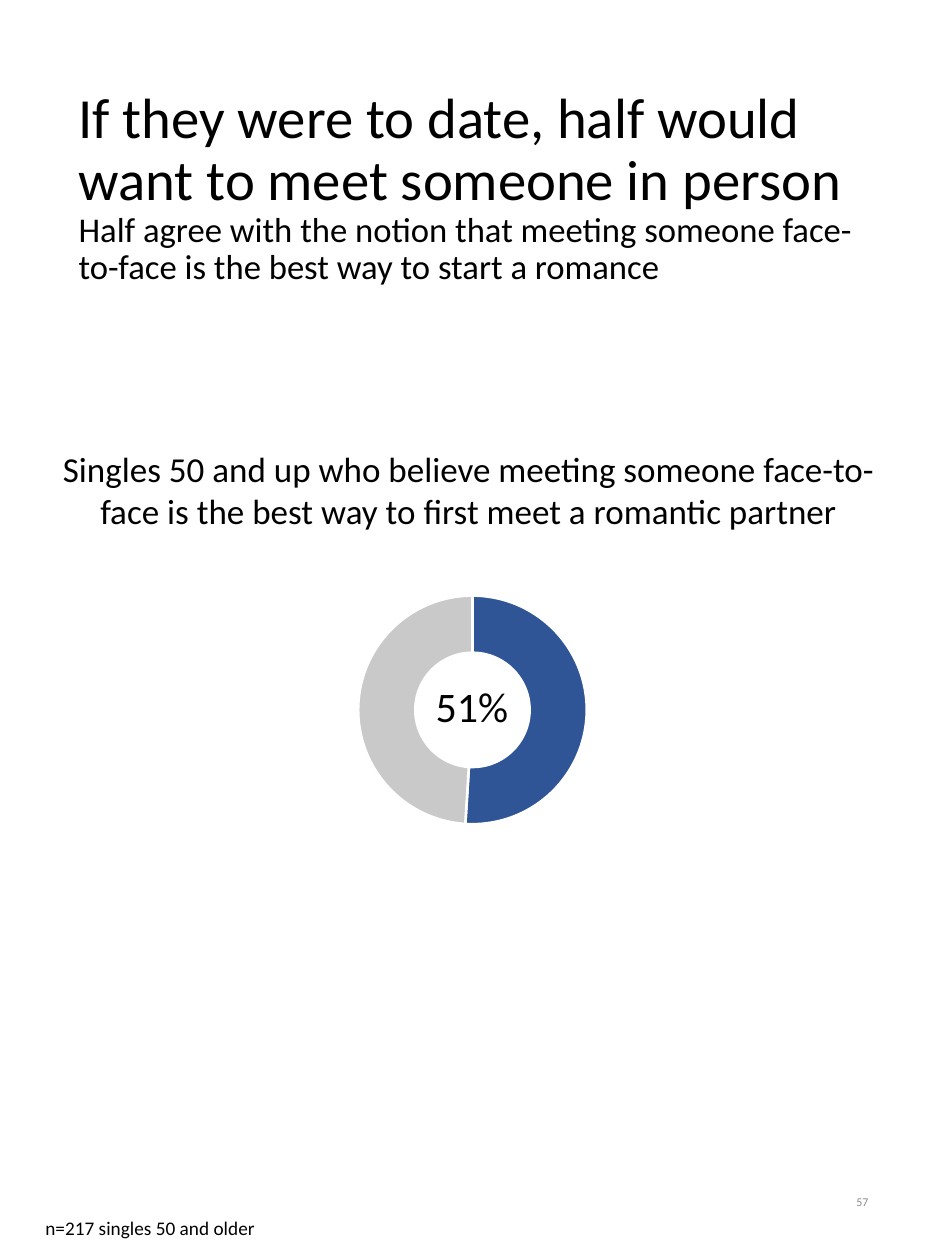
from copy import deepcopy
from dataclasses import dataclass

from lxml import etree
from pptx import Presentation
from pptx.chart.data import CategoryChartData
from pptx.dml.color import RGBColor
from pptx.enum.chart import XL_CHART_TYPE
from pptx.enum.text import MSO_ANCHOR, MSO_AUTO_SIZE, PP_ALIGN
from pptx.oxml.ns import qn
from pptx.util import Emu, Pt

DOUGHNUT = XL_CHART_TYPE.DOUGHNUT
LEFT, CENTER, RIGHT = PP_ALIGN.LEFT, PP_ALIGN.CENTER, PP_ALIGN.RIGHT
TOP, MIDDLE = MSO_ANCHOR.TOP, MSO_ANCHOR.MIDDLE
FIXED = MSO_AUTO_SIZE.NONE
TITLE_ONLY = 5
PX_PER_INCH = 126


@dataclass(frozen=True)
class Theme:
    font: str = "Calibri"
    ink: str = "000000"
    muted: str = "8C8C8C"
    agree: str = "2F5597"
    rest: str = "C9C9C9"
    gap: str = "FFFFFF"
    title: float = 32.4
    subtitle: float = 19.8
    caption: float = 20
    share: float = 24
    note: float = 11
    number: float = 6.8
    chart: float = 10


THEME = Theme()


def px(length):
    return Emu(round(length * 914400 / PX_PER_INCH))


def rgb(value):
    return RGBColor.from_string(value)


def set_font(font, size, color=THEME.ink):
    font.name = THEME.font
    font.size = Pt(size)
    font.color.rgb = rgb(color)


def add_run(paragraph, text, size, color=THEME.ink):
    run = paragraph.add_run()
    run.text = text
    set_font(run.font, size, color)
    return run


def add_text(slide, box, text, size, color=THEME.ink, align=LEFT, anchor=TOP):
    frame = slide.shapes.add_textbox(*map(px, box)).text_frame
    frame.word_wrap = True
    frame.auto_size = FIXED
    frame.vertical_anchor = anchor
    frame.paragraphs[0].alignment = align
    add_run(frame.paragraphs[0], text, size, color)


def add_heading(slide, box):
    """Headline with its smaller subtitle in the title placeholder."""
    title = slide.shapes.title
    title.left, title.top, title.width, title.height = map(px, box)
    frame = title.text_frame
    frame.word_wrap = True
    frame.auto_size = FIXED
    frame.vertical_anchor = MIDDLE
    paragraph = frame.paragraphs[0]
    paragraph.alignment = LEFT
    paragraph.line_spacing = 0.9
    headline = add_run(
        paragraph, "If they were to date, half would want to meet someone in person",
        THEME.title)
    # The line break takes the headline's type size
    paragraph.add_line_break()
    line_break = paragraph._p.find(qn("a:br"))
    line_break.append(deepcopy(headline.font._element))
    add_run(
        paragraph, "Half agree with the notion that meeting someone "
        "face-to-face is the best way to start a romance", THEME.subtitle)


def set_plot_area(chart, **fractions):
    """Fix the inner plot area as fractions of the chart box."""
    plot_area = chart._chartSpace.chart.plotArea
    layout = plot_area.find(qn("c:layout"))
    if layout is None:
        layout = etree.Element(qn("c:layout"))
        plot_area.insert(0, layout)
    manual = etree.SubElement(layout, qn("c:manualLayout"))
    settings = {"layoutTarget": "inner", "xMode": "edge", "yMode": "edge", **fractions}
    for tag, value in settings.items():
        etree.SubElement(manual, qn(f"c:{tag}")).set("val", str(value))


def add_share_ring(slide, box):
    """Doughnut of agreement with the share written in its hole."""
    data = CategoryChartData()
    data.categories = ["1", "2"]
    data.add_series("Series 1", [51, 49])
    chart = slide.shapes.add_chart(DOUGHNUT, *map(px, box), data).chart
    chart.has_legend = False
    chart.has_title = False
    set_font(chart.font, THEME.chart)
    set_plot_area(chart, x=0.2, y=0.07, w=0.6, h=0.86)

    ring = chart.plots[0]
    ring.vary_by_categories = True
    ring._element.find(qn("c:holeSize")).set("val", "64")
    for index, color in enumerate([THEME.agree, THEME.rest]):
        share = ring.series[0].points[index].format
        share.fill.solid()
        share.fill.fore_color.rgb = rgb(color)
        share.line.color.rgb = rgb(THEME.gap)
        share.line.width = Pt(1.5)

    left, top, width, height = box
    label_width, label_height = 108, 79
    label = (left + (width - label_width) // 2, top + 97, label_width, label_height)
    add_text(slide, label, "51%", THEME.share, align=CENTER)


def add_footer(slide, box):
    """Slide number above the sample-size note."""
    left, top, width, height = box
    add_text(slide, (left + 635, top, 213, 67), "57", THEME.number,
             THEME.muted, RIGHT, MIDDLE)
    add_text(slide, (left, top + 42, width, height - 42),
             "n=217 singles 50 and older", THEME.note)


def main():
    deck = Presentation()
    deck.slide_width, deck.slide_height = px(945), px(1260)
    slide = deck.slides.add_slide(deck.slide_layouts[TITLE_ONLY])
    add_heading(slide, (66, 67, 815, 243))
    add_share_ring(slide, (281, 577, 383, 266))
    add_text(slide, (50, 441, 837, 183),
             "Singles 50 and up who believe meeting someone face-to-face "
             "is the best way to first meet a romantic partner",
             THEME.caption, align=CENTER)
    add_footer(slide, (33, 1168, 879, 101))
    deck.save("out.pptx")


if __name__ == "__main__":
    main()
